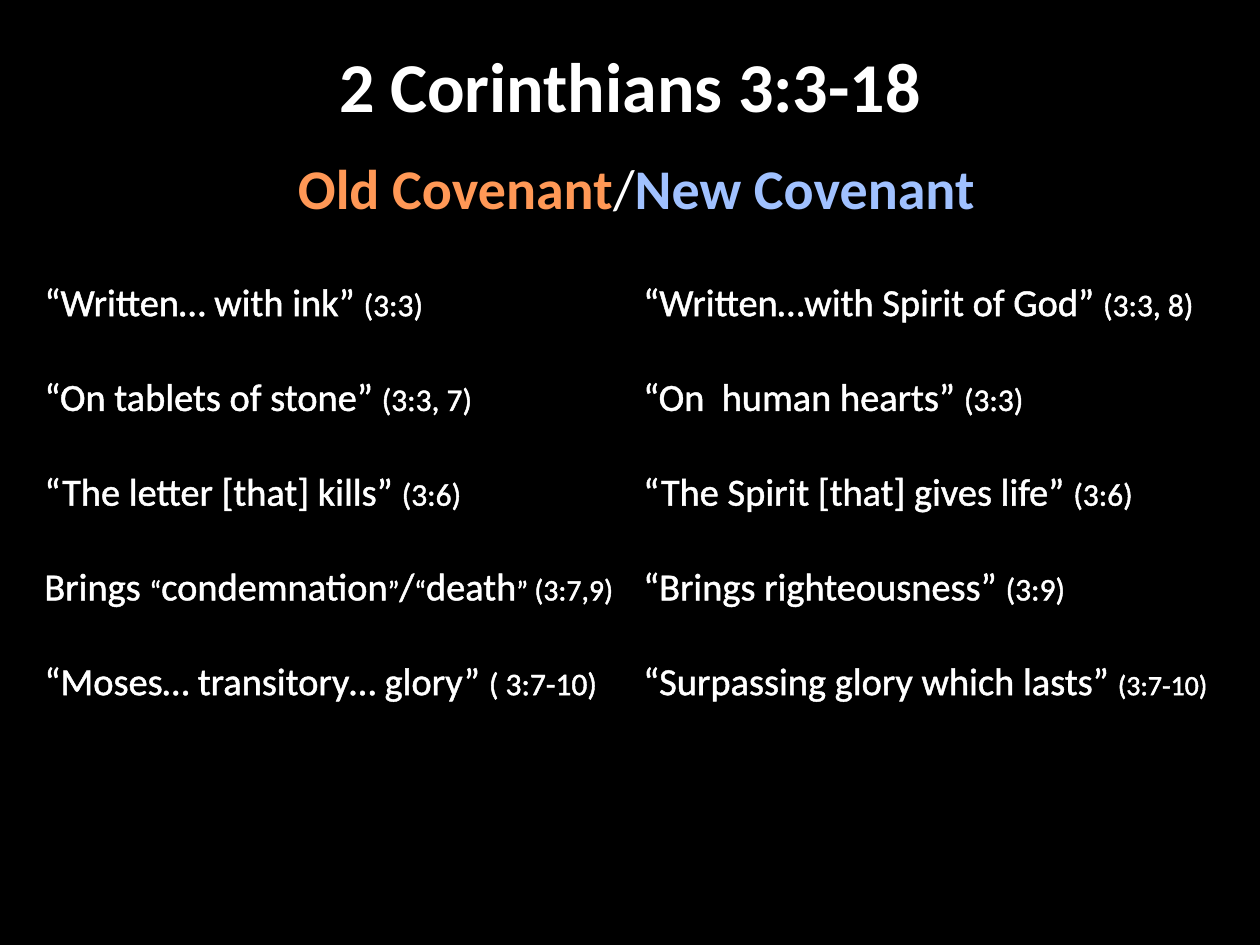
from lxml import etree
from pptx import Presentation
from pptx.dml.color import RGBColor
from pptx.enum.text import MSO_ANCHOR, PP_ALIGN
from pptx.oxml.ns import qn
from pptx.util import Cm, Pt

CENTER = PP_ALIGN.CENTER
TOP = MSO_ANCHOR.TOP
FONT = "Calibri"
WHITE, BLACK, ORANGE, BLUE = "FFFFFF", "000000", "FF9856", "A0C1FF"
NO_STYLE = "{2D5ABB26-0587-4C30-8999-92F81FD0307C}"
COLUMN_WIDTH = 12.07
ROW_HEIGHTS = [1.91] * 6 + [1.67]
HANGING = Cm(0.48)
QUOTE, REF = 22, 18

# Each row: old covenant, new covenant; each cell is a list of (text, size)
ROWS = [
    ([("“Written… with ink” ", QUOTE), ("(3:3)", REF)],
     [("“Written…with Spirit of God” ", QUOTE), ("(3:3, 8)", REF)]),
    ([("“On tablets of stone” ", QUOTE), ("(3:3, 7)", REF)],
     [("“On  human hearts” ", QUOTE), ("(3:3)", REF)]),
    ([("“The letter [that] kills” ", QUOTE), ("(3:6)", REF)],
     [("“The Spirit [that] gives life” ", QUOTE), ("(3:6)", REF)]),
    ([("Brings ", QUOTE), ("“", 16), ("condemnation", QUOTE), ("”", 16),
      ("/", QUOTE), ("“", 16), ("death", QUOTE), ("” ", 16), ("(3:7,9)", 17)],
     [("“Brings righteousness” ", QUOTE), ("(3:9)", REF)]),
    ([("“Moses… transitory… glory” ", QUOTE), ("( 3:7-10)", REF)],
     [("“Surpassing glory which lasts” ", QUOTE), ("(3:7-10)", 16)]),
]
UNINDENTED_ROW = 3


def rgb(value):
    return RGBColor.from_string(value)


def add_run(p, text, size, color=WHITE, bold=False):
    r = p.add_run()
    r.text = text
    r.font.name = FONT
    r.font.size = Pt(size)
    r.font.bold = bold
    r.font.color.rgb = rgb(color)
    return r


def outline(r, color, width):
    """Draw a thin line around the letters of a run."""
    ln = etree.Element(qn("a:ln"), w=str(Pt(width)))
    fill = etree.SubElement(ln, qn("a:solidFill"))
    etree.SubElement(fill, qn("a:srgbClr"), val=color)
    r.font._element.insert(0, ln)


def add_title(s, text):
    sp = s.shapes.title
    sp.left, sp.top, sp.width, sp.height = Cm(1.27), Cm(0.85), Cm(22.86), Cm(2.54)
    tf = sp.text_frame
    tf.margin_left = tf.margin_right = tf.margin_top = tf.margin_bottom = 0
    tf.vertical_anchor = TOP
    p = tf.paragraphs[0]
    p.alignment = CENTER
    add_run(p, text, 40, bold=True)


def add_subtitle(s, runs):
    sp = s.shapes.add_textbox(Cm(1.27), Cm(2.98), Cm(22.86), Cm(1.63))
    tf = sp.text_frame
    tf.word_wrap = True
    p = tf.paragraphs[0]
    p.alignment = CENTER
    for text, color, bold in runs:
        add_run(p, text, 32, color, bold)


def fill_cell(cell, runs, indented):
    p = cell.text_frame.paragraphs[0]
    if indented:
        pPr = p._p.get_or_add_pPr()
        pPr.set("marL", str(HANGING))
        pPr.set("indent", str(-HANGING))
    for text, size in runs:
        outline(add_run(p, text, size), WHITE, 0.75)


def add_comparison(s):
    frame = s.shapes.add_table(len(ROW_HEIGHTS), 2, Cm(0.64), Cm(5.51),
                               Cm(2 * COLUMN_WIDTH), Cm(sum(ROW_HEIGHTS)))
    table = frame.table
    table.first_row = table.horz_banding = False
    table._tbl.tblPr.find(qn("a:tableStyleId")).text = NO_STYLE
    for column in table.columns:
        column.width = Cm(COLUMN_WIDTH)
    for row, height in zip(table.rows, ROW_HEIGHTS):
        row.height = Cm(height)
    for cell in table.iter_cells():
        cell.fill.background()
    for i, row in enumerate(ROWS):
        for j, runs in enumerate(row):
            fill_cell(table.cell(i, j), runs, i != UNINDENTED_ROW)


def main():
    prs = Presentation()
    prs.slide_width, prs.slide_height = Cm(25.4), Cm(19.05)
    s = prs.slides.add_slide(prs.slide_layouts[5])
    s.background.fill.solid()
    s.background.fill.fore_color.rgb = rgb(BLACK)

    # Headings
    add_title(s, "2 Corinthians 3:3-18")
    add_subtitle(s, [(" Old Covenant", ORANGE, True), ("/", WHITE, False),
                     ("New Covenant", BLUE, True)])

    # Old and new covenant side by side
    add_comparison(s)
    prs.save("out.pptx")


if __name__ == "__main__":
    main()
